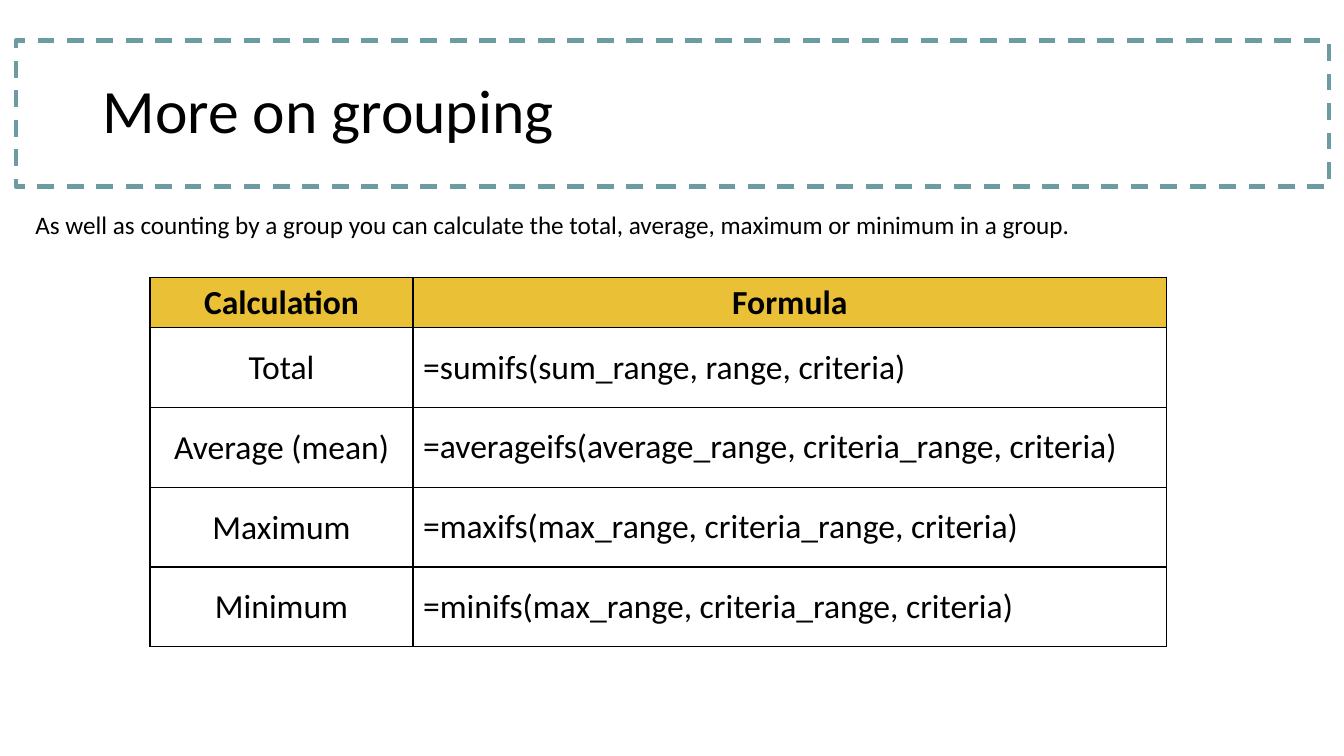
import pptx
import pptx.util
import pptx.dml.color
import pptx.enum.dml
import pptx.enum.shapes
import pptx.enum.text
from lxml import etree
from pptx.util import Cm, Pt

HUES = {"text": "000000", "frame": "6A9CA1", "head": "EAC036", "cell": "FFFFFF"}
FONT = "Calibri"
ALIGN = pptx.enum.text.PP_ALIGN
MIDDLE = pptx.enum.text.MSO_ANCHOR.MIDDLE
ROWS = [
    ("Calculation", "Formula"),
    ("Total", "=sumifs(sum_range, range, criteria)"),
    ("Average (mean)", "=averageifs(average_range, criteria_range, criteria)"),
    ("Maximum", "=maxifs(max_range, criteria_range, criteria)"),
    ("Minimum", "=minifs(max_range, criteria_range, criteria)"),
]


def color(name):
    return pptx.dml.color.RGBColor.from_string(HUES[name])


def write(frame, text, size, align=ALIGN.LEFT, bold=False):
    para = frame.paragraphs[0]
    para.alignment = align
    run = para.add_run()
    run.text = text
    run.font.name = FONT
    run.font.size = Pt(size)
    run.font.bold = bold
    run.font.color.rgb = color("text")
    return para


def add_frame(slide):
    box = slide.shapes.add_shape(
        pptx.enum.shapes.MSO_SHAPE.RECTANGLE, Cm(0.4), Cm(1.02), Cm(33.1), Cm(3.68))
    box.shadow.inherit = False
    box.fill.background()
    box.line.color.rgb = color("frame")
    box.line.width = Pt(3)
    box.line.dash_style = pptx.enum.dml.MSO_LINE.DASH


def add_title(slide, text):
    title = slide.shapes.title
    title.left, title.top = Cm(2.33), Cm(1.02)
    title.width, title.height = Cm(29.21), Cm(3.68)
    title.text_frame.vertical_anchor = MIDDLE
    write(title.text_frame, text, 44).line_spacing = 0.9


def add_intro(slide, text):
    box = slide.shapes.add_textbox(Cm(0.64), Cm(5.16), Cm(31.88), Cm(1.02))
    box.text_frame.word_wrap = True
    write(box.text_frame, text, 18)


def add_border(cell):
    props = cell._tc.get_or_add_tcPr()
    space = props.nsmap["a"]
    for side in "LRTB":
        line = etree.SubElement(props, f"{{{space}}}ln{side}", w=str(Pt(1)))
        fill = etree.SubElement(line, f"{{{space}}}solidFill")
        etree.SubElement(fill, f"{{{space}}}srgbClr", val=HUES["text"])


def add_grid(slide):
    widths = (Cm(6.63), Cm(18.99))
    heights = [Cm(1.27)] + [Cm(2.01)] * (len(ROWS) - 1)
    table = slide.shapes.add_table(
        len(ROWS), len(widths), Cm(3.78), Cm(6.99), sum(widths), sum(heights)).table
    table.first_row = table.horz_banding = False
    for col, width in zip(table.columns, widths):
        col.width = width
    for r, texts in enumerate(ROWS):
        table.rows[r].height = heights[r]
        head = r == 0
        for c, text in enumerate(texts):
            cell = table.cell(r, c)
            add_border(cell)
            cell.fill.solid()
            cell.fill.fore_color.rgb = color("head" if head else "cell")
            if not head:
                cell.vertical_anchor = MIDDLE
                if c == 0:
                    cell.margin_left = cell.margin_right = cell.margin_top = Cm(0.03)
                    cell.margin_bottom = 0
            align = ALIGN.CENTER if head or c == 0 else ALIGN.LEFT
            write(cell.text_frame, text, 24, align, head)


def main():
    deck = pptx.Presentation()
    deck.slide_width, deck.slide_height = Cm(33.87), Cm(19.05)
    slide = deck.slides.add_slide(deck.slide_layouts[5])
    add_frame(slide)
    add_title(slide, "More on grouping")
    add_intro(slide, "As well as counting by a group you can calculate the total, "
                     "average, maximum or minimum in a group.")
    add_grid(slide)
    deck.save("out.pptx")


if __name__ == "__main__":
    main()
